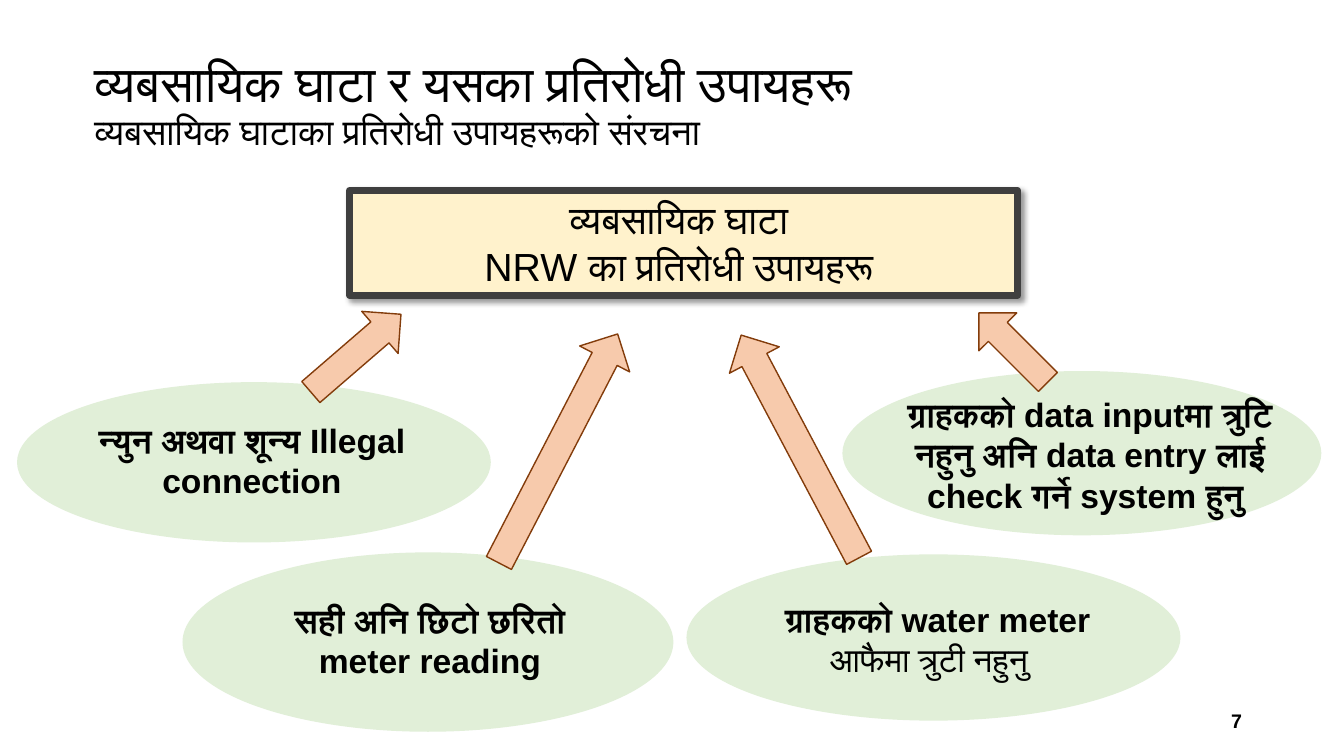
"""Build the slide on measures against commercial water losses."""
from lxml import etree
from pptx import Presentation
from pptx import util as u
from pptx.dml.color import RGBColor
from pptx.enum import shapes, text
from pptx.oxml.ns import qn

BLACK = RGBColor(0x00, 0x00, 0x00)
GREEN = RGBColor(0xE1, 0xEF, 0xD8)
CREAM = RGBColor(0xFF, 0xF2, 0xCC)
CHARCOAL = RGBColor(0x3F, 0x3F, 0x3F)
PEACH = RGBColor(0xF7, 0xCA, 0xAC)
BROWN = RGBColor(0x83, 0x3C, 0x0B)

MEASURES = [
    ((17.3, 13.97, 12.45, 4.19), (18.06, 14.96, 10.9, 2.31),
     [(" ग्राहकको water meter", 24, True), ("आफैमा त्रुटी नहुनु ", 24, False)]),
    ((4.6, 13.92, 12.37, 4.52), (5.97, 14.99, 9.73, 2.31),
     [("सही अनि छिटो छरितो meter reading", 24, True)]),
    ((0.43, 9.63, 11.94, 4.04), (1.65, 10.46, 9.4, 2.31),
     [("न्युन अथवा शून्य Illegal connection", 24, True)]),
    ((21.23, 9.35, 12.07, 4.14), (22.25, 9.8, 10.44, 3.33),
     [("ग्राहकको data inputमा त्रुटि नहुनु अनि data entry लाई check गर्ने system हुनु ", 24, True)]),
]
ARROWS = [
    ((7.47, 8.2, 3, 1.4), 319.2),
    ((24.31, 8.08, 2.46, 1.35), 225),
    ((10.82, 10.59, 6.5, 1.42), 297.4),
    ((16.99, 10.54, 6.35, 1.42), 242.1),
]

deck = Presentation()
deck.slide_width, deck.slide_height = u.Cm(33.87), u.Cm(19.05)
page = deck.slides.add_slide(deck.slide_layouts[6])


def add_figure(kind, place, fill, line=None, width=0):
    figure = page.shapes.add_shape(kind, *map(u.Cm, place))
    figure.shadow.inherit = False
    figure.fill.solid()
    figure.fill.fore_color.rgb = fill
    if line is None:
        figure.line.fill.background()
    else:
        figure.line.color.rgb = line
        figure.line.width = u.Pt(width)
    return figure


def write(box, lines, align, anchor=text.MSO_ANCHOR.TOP, spacing=None):
    frame = box.text_frame
    frame.word_wrap = True
    frame.vertical_anchor = anchor
    for index, (words, size, bold) in enumerate(lines):
        para = frame.add_paragraph() if index else frame.paragraphs[0]
        para.text = words
        para.alignment = align
        para.line_spacing = spacing
        para.font.name = "Arial"
        para.font.size = u.Pt(size)
        para.font.bold = bold
        para.font.color.rgb = BLACK


title = page.shapes.add_textbox(*map(u.Cm, (2.13, 0.66, 30.56, 4.04)))
write(title, [("व्यबसायिक घाटा र यसका प्रतिरोधी उपायहरू ", 36, False),
              ("व्यबसायिक घाटाका प्रतिरोधी उपायहरूको संरचना", 26, False)],
      text.PP_ALIGN.LEFT, text.MSO_ANCHOR.MIDDLE, 0.9)

number = page.shapes.add_textbox(*map(u.Cm, (23.93, 17.65, 7.62, 1.02)))
write(number, [("7", 14, True)], text.PP_ALIGN.RIGHT, text.MSO_ANCHOR.MIDDLE)

goal = add_figure(shapes.MSO_SHAPE.RECTANGLE, (8.81, 4.8, 16.84, 2.64), CREAM, CHARCOAL, 5)
write(goal, [("व्यबसायिक घाटा ", 28, False), ("NRW का प्रतिरोधी उपायहरू ", 28, False)],
      text.PP_ALIGN.CENTER)
effects = goal._element.spPr.find(qn("a:effectLst"))
shadow = etree.SubElement(effects, qn("a:outerShdw"), blurRad=str(u.Pt(4)),
                          dist=str(u.Pt(3)), dir="2700000", algn="tl", rotWithShape="0")
shade = etree.SubElement(shadow, qn("a:srgbClr"), val="000000")
etree.SubElement(shade, qn("a:alpha"), val="40000")

for oval_place, label_place, lines in MEASURES:
    add_figure(shapes.MSO_SHAPE.OVAL, oval_place, GREEN)
    label = page.shapes.add_textbox(*map(u.Cm, label_place))
    write(label, lines, text.PP_ALIGN.CENTER)

for place, angle in ARROWS:
    arrow = add_figure(shapes.MSO_SHAPE.RIGHT_ARROW, place, PEACH, BROWN, 1)
    arrow.rotation = angle

deck.save("out.pptx")
